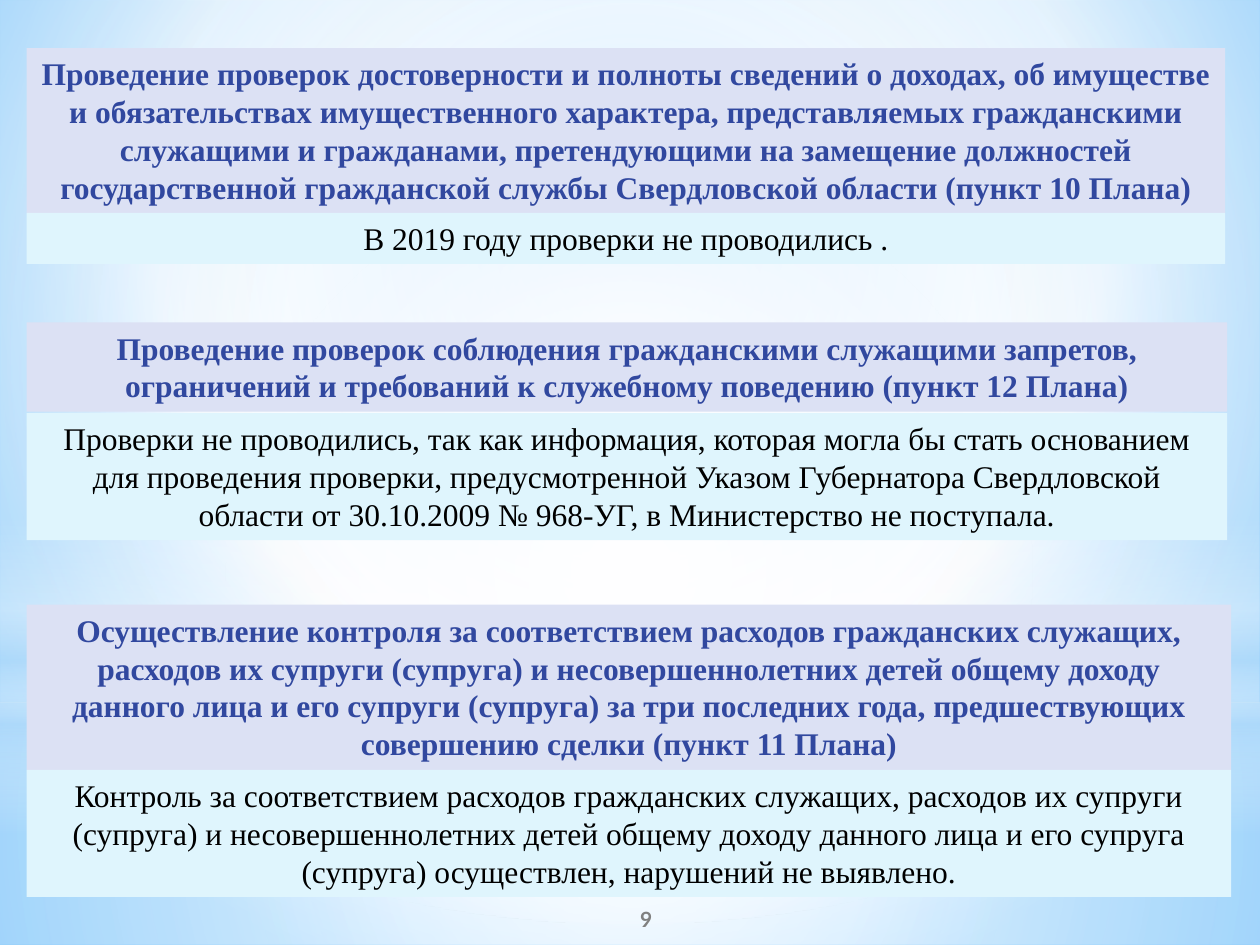
import pptx
import pptx.dml.color
import pptx.enum.shapes
import pptx.enum.text
import pptx.oxml
import pptx.oxml.ns
import pptx.util

Cm = pptx.util.Cm
SHAPE = pptx.enum.shapes.MSO_SHAPE
ALIGN = pptx.enum.text.PP_ALIGN
ANCHOR = pptx.enum.text.MSO_ANCHOR
AUTO = pptx.enum.text.MSO_AUTO_SIZE

COLORS = {
    "heading_fill": "DCE1F4", "heading_text": "31489F",
    "body_fill": "DFF5FD", "body_text": "000000", "number": "808080",
    "white": "FFFFFF", "pale": "B4DCFA", "sky": "9ED5FF", "blue": "5BB9FF",
}
CENTER = (50, 50, 50, 50)


def rgb(name):
    return pptx.dml.color.RGBColor.from_string(COLORS[name])


def set_gradient(fill, stops, focus=None):
    """Fill with (position, colour, opacity) stops: circular around focus, else top to bottom."""
    fill.gradient()
    grad = fill._xPr.find(pptx.oxml.ns.qn("a:gradFill"))
    marks = "".join(
        f'<a:gs pos="{pos * 1000}"><a:srgbClr val="{COLORS[color]}">'
        f'<a:alpha val="{opacity * 1000}"/></a:srgbClr></a:gs>'
        for pos, color, opacity in stops)
    if focus:
        sides = " ".join(f'{k}="{v * 1000}"' for k, v in zip("ltrb", focus))
        course = f'<a:path path="circle"><a:fillToRect {sides}/></a:path>'
    else:
        course = '<a:lin ang="5400000" scaled="0"/>'
    new = pptx.oxml.parse_xml(
        f'<a:gradFill {pptx.oxml.ns.nsdecls("a")} rotWithShape="1">'
        f'<a:gsLst>{marks}</a:gsLst>{course}</a:gradFill>')
    grad.getparent().replace(grad, new)


class Deck:
    font = "Times New Roman"
    size = 18

    def __init__(self, width, height):
        self.prs = pptx.Presentation()
        self.prs.slide_width, self.prs.slide_height = Cm(width), Cm(height)
        self.s = self.prs.slides.add_slide(self.prs.slide_layouts[6])

    def background(self, stops, focus):
        set_gradient(self.s.background.fill, stops, focus)

    def shape(self, kind, box):
        sp = self.s.shapes.add_shape(kind, *map(Cm, box))
        sp.shadow.inherit = False
        sp.line.fill.background()
        return sp

    def glow(self, kind, box, stops, focus=None):
        set_gradient(self.shape(kind, box).fill, stops, focus)

    def add_text(self, sp, text, color, bold=False, font=None, size=None):
        tf = sp.text_frame
        tf.word_wrap = True
        p = tf.paragraphs[0]
        p.alignment = ALIGN.CENTER
        r = p.add_run()
        r.text = text
        r.font.name = font or self.font
        r.font.size = pptx.util.Pt(size or self.size)
        r.font.bold = bold
        r.font.color.rgb = rgb(color)
        return tf

    def panel(self, box, text, role, bold=False):
        sp = self.shape(SHAPE.RECTANGLE, box)
        sp.fill.solid()
        sp.fill.fore_color.rgb = rgb(role + "_fill")
        tf = self.add_text(sp, text, role + "_text", bold)
        tf.vertical_anchor = ANCHOR.TOP
        tf.auto_size = AUTO.SHAPE_TO_FIT_TEXT

    def page_number(self, box, text):
        sp = self.s.shapes.add_textbox(*map(Cm, box))
        tf = self.add_text(sp, text, "number", True, "Lato", 12)
        tf.vertical_anchor = ANCHOR.MIDDLE


# top, width, heading height, body top, body height, heading, body
SECTIONS = [
    (0.97, 24.16, 3.33, 4.29, 1.03,
     "Проведение проверок достоверности и полноты сведений о доходах, об имуществе "
     "и обязательствах имущественного характера, представляемых гражданскими служащими "
     "и гражданами, претендующими на замещение должностей государственной гражданской "
     "службы Свердловской области (пункт 10 Плана)",
     "В 2019 году проверки не проводились ."),
    (6.5, 24.2, 1.8, 8.33, 2.56,
     "Проведение проверок соблюдения гражданскими служащими запретов, ограничений "
     "и требований к служебному поведению (пункт 12 Плана)",
     "Проверки не проводились, так как информация, которая могла бы стать основанием "
     "для проведения проверки, предусмотренной Указом Губернатора Свердловской области "
     "от 30.10.2009 № 968-УГ, в Министерство не поступала."),
    (12.19, 24.28, 3.33, 15.52, 2.56,
     "Осуществление контроля за соответствием расходов гражданских служащих, расходов их "
     "супруги (супруга) и несовершеннолетних детей общему доходу данного лица и его супруги "
     "(супруга) за три последних года, предшествующих совершению сделки (пункт 11 Плана)",
     "Контроль за соответствием расходов гражданских служащих, расходов их супруги (супруга) "
     "и несовершеннолетних детей общему доходу данного лица и его супруга (супруга) "
     "осуществлен, нарушений не выявлено."),
]


def main():
    deck = Deck(25.4, 19.05)
    deck.background([(0, "sky", 100), (60, "white", 100), (100, "blue", 100)],
                    (20, 10, 20, 60))
    deck.glow(SHAPE.RECTANGLE, (0, 14.17, 25.4, 4.88),
              [(0, "white", 91), (37, "white", 76), (100, "pale", 79)], CENTER)
    deck.glow(SHAPE.RECTANGLE, (0, 0, 25.4, 14.17),
              [(0, "white", 89), (48, "white", 62), (100, "pale", 79)], CENTER)
    deck.glow(SHAPE.RECTANGLE, (0, 10.46, 25.4, 6.35),
              [(0, "white", 0), (29, "white", 30), (45, "pale", 40),
               (55, "white", 26), (65, "pale", 60), (100, "white", 0)])
    deck.glow(SHAPE.OVAL, (0, 4.45, 25.4, 14.17),
              [(0, "white", 100), (56, "white", 0)], CENTER)

    left = 0.54
    for top, width, height, body_top, body_height, heading, body in SECTIONS:
        deck.panel((left, top, width, height), heading, "heading", bold=True)
        deck.panel((left, body_top, width, body_height), body, "body")
    deck.page_number((10.49, 18.01, 5.08, 1.02), "9")
    deck.prs.save("out.pptx")


if __name__ == "__main__":
    main()
